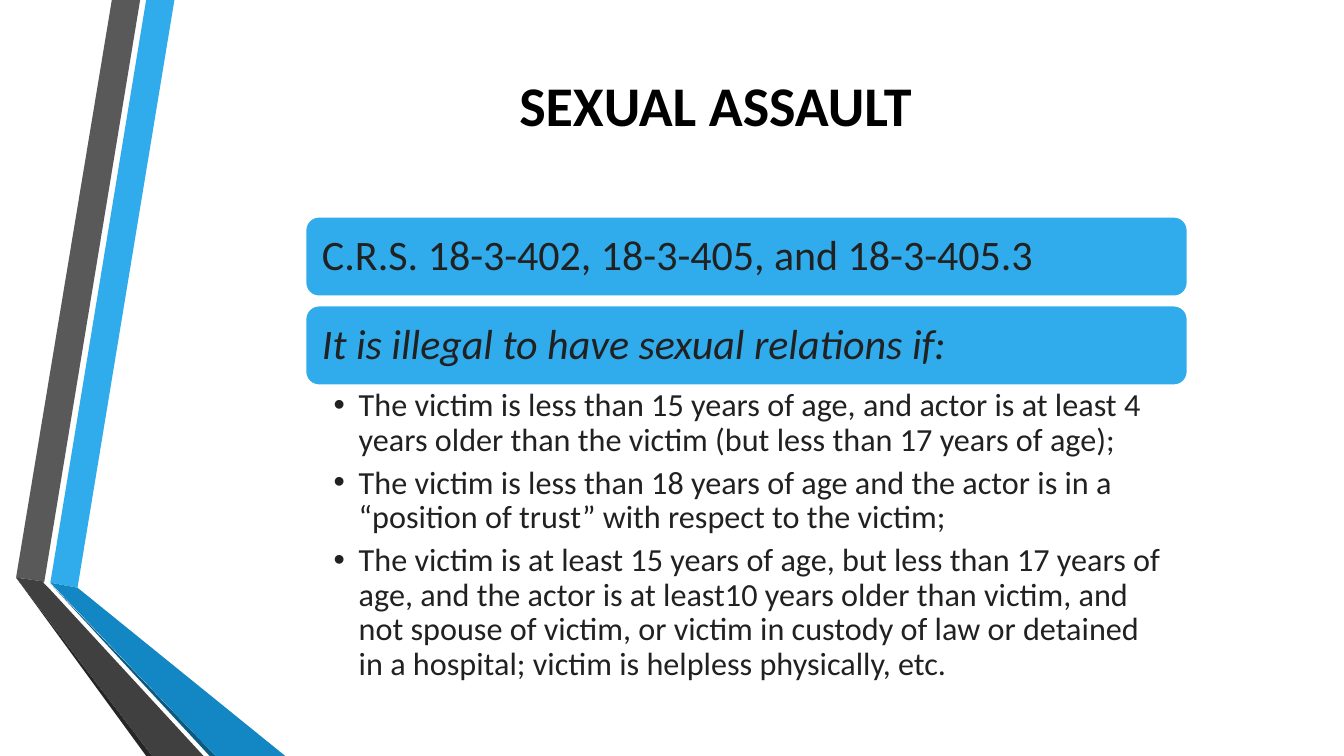
from lxml.etree import SubElement
from pptx import Presentation
from pptx.dml.color import RGBColor
from pptx.enum.shapes import MSO_SHAPE
from pptx.enum.text import MSO_ANCHOR, MSO_AUTO_SIZE, PP_ALIGN
from pptx.oxml.ns import qn
from pptx.util import Pt

FONT, INK, BLUE = "Calibri", "212121", "30ACEC"
TITLE = "SEXUAL ASSAULT"
BARS = [
    ("C.R.S. 18-3-402, 18-3-405, and 18-3-405.3", False),
    ("It is illegal to have sexual relations if:", True),
]
RULES = [
    "The victim is less than 15 years of age, and actor is at least 4 years older "
    "than the victim (but less than 17 years of age);",
    "The victim is less than 18 years of age and the actor is in a “position of "
    "trust” with respect to the victim;",
    "The victim is at least 15 years of age, but less than 17 years of age, and the "
    "actor is at least10 years older than victim, and not spouse of victim, or victim "
    "in custody of law or detained in a hospital; victim is helpless physically, etc.",
]
# Folded ribbons: fill and corners in points
RIBBONS = [
    (BLUE, [(36, 416.2), (55.4, 419.8), (124.6, 0), (104.4, 0)]),
    ("595959", [(100.1, 0), (79.9, 0), (11.5, 412.6), (31.7, 415.4)]),
    ("262626", [(11.5, 412.6), (104.4, 540), (108.7, 540)]),
    ("0C5A82", [(36, 416.9), (149.8, 540), (154.1, 540)]),
    ("1287C3", [(36, 416.2), (154.1, 540), (203.8, 540), (55.4, 419.8)]),
    ("404040", [(145.4, 540), (34.6, 419.8), (31, 416.2), (31.7, 415.4),
                (11.5, 412.6), (108.7, 540)]),
]
LEFT, WIDTH = 218.2, 630
BAR_TOP, BAR_STEP, BAR_HIGH = 154.8, 63.5, 56.9


def color(code):
    return RGBColor.from_string(code)


def place(shape, *box):
    shape.left, shape.top, shape.width, shape.height = map(Pt, box)


def inset(frame, left, top, right, bottom):
    frame.margin_left, frame.margin_top = Pt(left), Pt(top)
    frame.margin_right, frame.margin_bottom = Pt(right), Pt(bottom)
    frame.word_wrap = True
    frame.auto_size = MSO_AUTO_SIZE.NONE


def style(para, size, ink=INK, bold=False, italic=False):
    for run in para.runs:
        font = run.font
        font.name, font.size = FONT, Pt(size)
        font.bold, font.italic = bold, italic
        font.color.rgb = color(ink)


def paint(shape, fill):
    shape.shadow.inherit = False
    shape.fill.solid()
    shape.fill.fore_color.rgb = color(fill)


def bullet(para, indent):
    props = para._p.get_or_add_pPr()
    props.set("marL", str(Pt(indent)))
    props.set("indent", str(-Pt(indent)))
    SubElement(props, qn("a:buFont")).set("typeface", "Arial")
    SubElement(props, qn("a:buChar")).set("char", "•")


def add_ribbon(slide, fill, points):
    start, *rest = [(Pt(x), Pt(y)) for x, y in points]
    build = slide.shapes.build_freeform(*start)
    build.add_line_segments(rest, close=True)
    shape = build.convert_to_shape()
    paint(shape, fill)
    shape.line.fill.background()


def add_bar(slide, row, text, italic):
    bar = slide.shapes.add_shape(
        MSO_SHAPE.ROUNDED_RECTANGLE,
        Pt(LEFT), Pt(BAR_TOP + row * BAR_STEP), Pt(WIDTH), Pt(BAR_HIGH))
    paint(bar, BLUE)
    bar.line.color.rgb = color("FFFFFF")
    bar.line.width = Pt(1.25)
    frame = bar.text_frame
    inset(frame, 9, 9, 9, 9)
    frame.vertical_anchor = MSO_ANCHOR.MIDDLE
    frame.text = text
    para = frame.paragraphs[0]
    para.alignment = PP_ALIGN.LEFT
    para.line_spacing = 0.9
    style(para, 30, italic=italic)


def fill_title(shape):
    place(shape, 116.6, 18, 789.1, 113)
    frame = shape.text_frame
    inset(frame, 7.2, 3.6, 7.2, 3.6)
    frame.vertical_anchor = MSO_ANCHOR.MIDDLE
    frame.text = TITLE
    frame.paragraphs[0].alignment = PP_ALIGN.CENTER
    style(frame.paragraphs[0], 40, "000000", bold=True)


def fill_rules(shape):
    place(shape, LEFT, 275, WIDTH, 220.3)
    frame = shape.text_frame
    inset(frame, 20, 2.9, 16.6, 2.9)
    frame.vertical_anchor = MSO_ANCHOR.TOP
    frame.text = "\n".join(RULES)
    for para in frame.paragraphs:
        para.level = 1
        para.line_spacing = 0.9
        para.space_before, para.space_after = Pt(0), Pt(5.5)
        bullet(para, 18)
        style(para, 23)


def main():
    deck = Presentation()
    deck.slide_width, deck.slide_height = Pt(960), Pt(540)
    slide = deck.slides.add_slide(deck.slide_layouts[1])
    for fill, points in RIBBONS:
        add_ribbon(slide, fill, points)
    fill_title(slide.shapes.title)
    for row, (text, italic) in enumerate(BARS):
        add_bar(slide, row, text, italic)
    fill_rules(slide.placeholders[1])
    deck.save("out.pptx")


if __name__ == "__main__":
    main()
